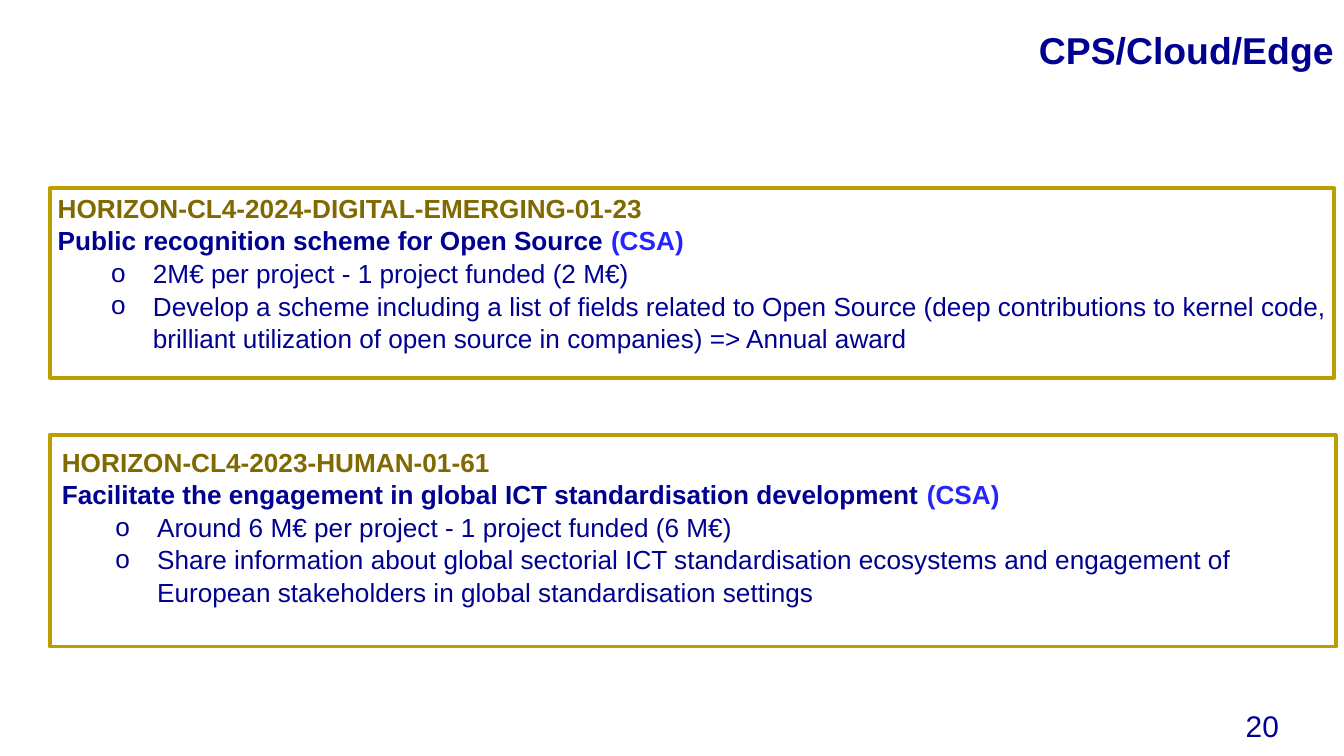
"""Build the CPS/Cloud/Edge slide with two framed call topics."""
from lxml import etree
from pptx import Presentation
from pptx import util as u
from pptx.dml.color import RGBColor
from pptx.enum import shapes, text
from pptx.oxml import ns

NAVY = RGBColor(0x00, 0x00, 0x91)
BLUE = RGBColor(0x24, 0x24, 0xFF)
OLIVE = RGBColor(0x80, 0x6A, 0x00)
GOLD = RGBColor(0xBD, 0x9E, 0x00)

TITLE = "CPS/Cloud/Edge"
PAGE_NUMBER = "20"
TOPICS = [
    {
        "call": "HORIZON-CL4-2024-DIGITAL-EMERGING-01-23",
        "name": "Public recognition scheme for Open Source ",
        "type": "(CSA)",
        "points": [
            "2M€ per project - 1 project funded (2 M€)",
            "Develop a scheme including a list of fields related to Open Source "
            "(deep contributions to kernel code, brilliant utilization of open "
            "source in companies) => Annual award",
        ],
        "text_box": (1.09, 3.61, 24.28, 9.68),
        "frame": (0.94, 3.56, 24.28, 3.58),
    },
    {
        "call": "HORIZON-CL4-2023-HUMAN-01-61",
        "name": "Facilitate the engagement in global ICT standardisation development ",
        "type": "(CSA)",
        "points": [
            "Around 6 M€ per project - 1 project funded (6 M€)",
            "Share information about global sectorial ICT standardisation "
            "ecosystems and engagement of European stakeholders in global "
            "standardisation settings",
        ],
        "text_box": (1.17, 8.41, 23.9, 3.38),
        "frame": (0.94, 8.23, 24.31, 3.99),
    },
]
TITLE_BOX = (9.73, 0.43, 15.67, 0.94)
NUMBER_BOX = (21.11, 13.28, 3.25, 0.99)
POINT_INDENT = (1.8, -0.79)

PLAIN = {"name": "Arial", "size": u.Pt(14), "bold": False}
BOLD = {**PLAIN, "bold": True}
TITLE_FONT = {**BOLD, "size": u.Pt(20)}
NUMBER_FONT = {**PLAIN, "size": u.Pt(16)}
TOPIC_SPACING = {"space_before": u.Pt(0), "space_after": u.Pt(0), "line_spacing": 1.04}


def apply(target, values):
    for name, value in values.items():
        setattr(target, name, value)


def lengths(values):
    return [u.Cm(value) for value in values]


def place(shape, box):
    apply(shape, dict(zip(("left", "top", "width", "height"), lengths(box))))


def set_frame(shape, margins, anchor=text.MSO_ANCHOR.TOP):
    names = ("margin_left", "margin_top", "margin_right", "margin_bottom")
    apply(shape.text_frame, dict(zip(names, lengths(margins))))
    apply(shape.text_frame, {
        "word_wrap": True,
        "auto_size": text.MSO_AUTO_SIZE.NONE,
        "vertical_anchor": anchor,
    })


def add_run(paragraph, words, font, color):
    run = paragraph.add_run()
    run.text = words
    apply(run.font, font)
    run.font.color.rgb = color


def set_bullet(paragraph, character=None):
    properties = paragraph._p.get_or_add_pPr()
    margin, indent = lengths(POINT_INDENT if character else (0, 0))
    properties.set("marL", str(margin))
    properties.set("indent", str(indent))
    if character:
        etree.SubElement(properties, ns.qn("a:buFont")).set("typeface", "Arial")
        etree.SubElement(properties, ns.qn("a:buChar")).set("char", character)
    else:
        etree.SubElement(properties, ns.qn("a:buNone"))


def write_topic(shape, topic):
    place(shape, topic["text_box"])
    set_frame(shape, (0, 0, 0, 0))
    lines = [
        (None, [(topic["call"], BOLD, OLIVE)]),
        (None, [(topic["name"], BOLD, NAVY), (topic["type"], BOLD, BLUE)]),
    ]
    lines += [("o", [(point, PLAIN, NAVY)]) for point in topic["points"]]
    for index, (bullet, runs) in enumerate(lines):
        frame = shape.text_frame
        paragraph = frame.add_paragraph() if index else frame.paragraphs[0]
        paragraph.level = 4 if bullet else 0
        set_bullet(paragraph, bullet)
        apply(paragraph, {**TOPIC_SPACING, "alignment": text.PP_ALIGN.LEFT})
        for run in runs:
            add_run(paragraph, *run)


def add_frame(slide, box):
    frame = slide.shapes.add_shape(shapes.MSO_SHAPE.RECTANGLE, *lengths(box))
    frame.shadow.inherit = False
    frame.fill.background()
    frame.line.color.rgb = GOLD
    frame.line.width = u.Pt(2)


def write_right(shape, words, font):
    paragraph = shape.text_frame.paragraphs[0]
    paragraph.alignment = text.PP_ALIGN.RIGHT
    add_run(paragraph, words, font, NAVY)
    return paragraph


def main():
    presentation = Presentation()
    presentation.slide_width, presentation.slide_height = lengths((25.4, 14.29))
    slide = presentation.slides.add_slide(presentation.slide_layouts[1])

    title = slide.shapes.title
    place(title, TITLE_BOX)
    set_frame(title, (0.19, 0.1, 0.19, 0), text.MSO_ANCHOR.BOTTOM)
    write_right(title, TITLE, TITLE_FONT).line_spacing = 0.9

    number = slide.shapes.add_textbox(*lengths(NUMBER_BOX))
    set_frame(number, (0.19, 0.1, 0.19, 0.1))
    write_right(number, PAGE_NUMBER, NUMBER_FONT)

    second_box = slide.shapes.add_textbox(*lengths(TOPICS[1]["text_box"]))
    for shape, topic in zip((slide.placeholders[1], second_box), TOPICS):
        write_topic(shape, topic)
        add_frame(slide, topic["frame"])

    presentation.save("out.pptx")


if __name__ == "__main__":
    main()
